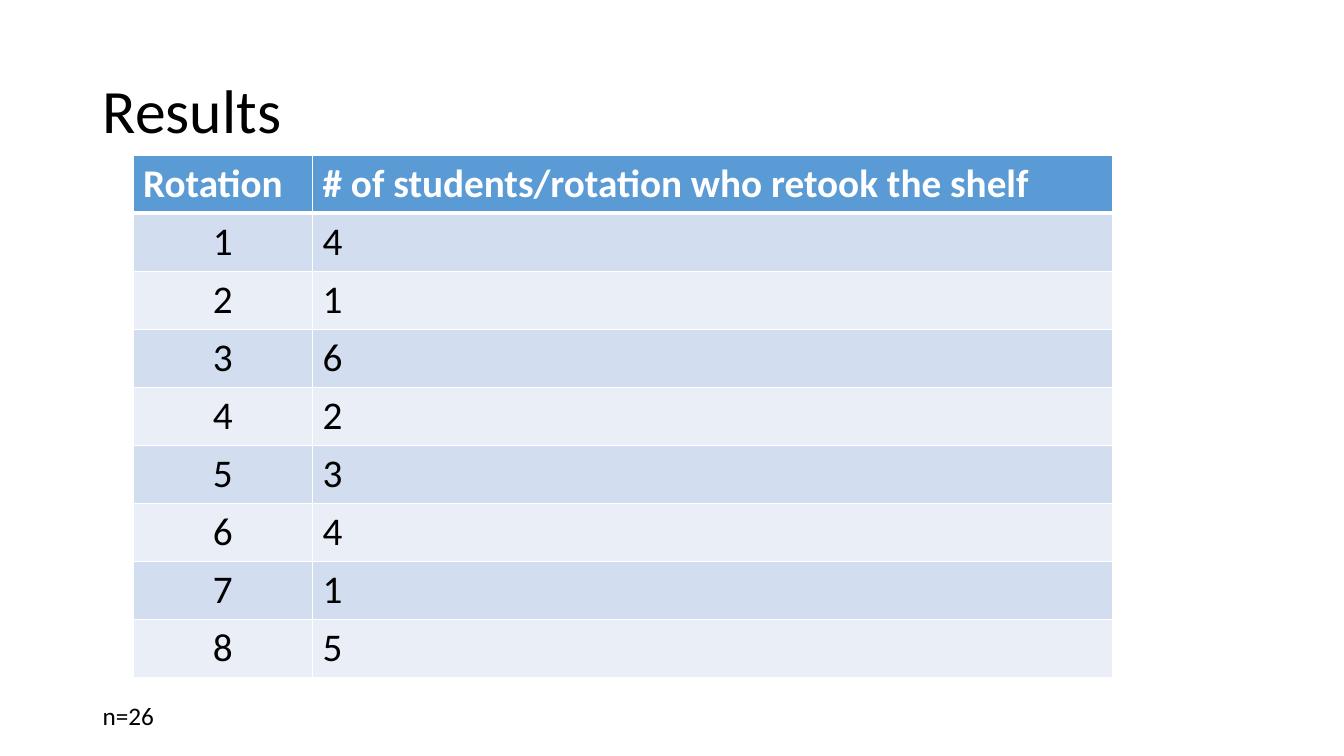
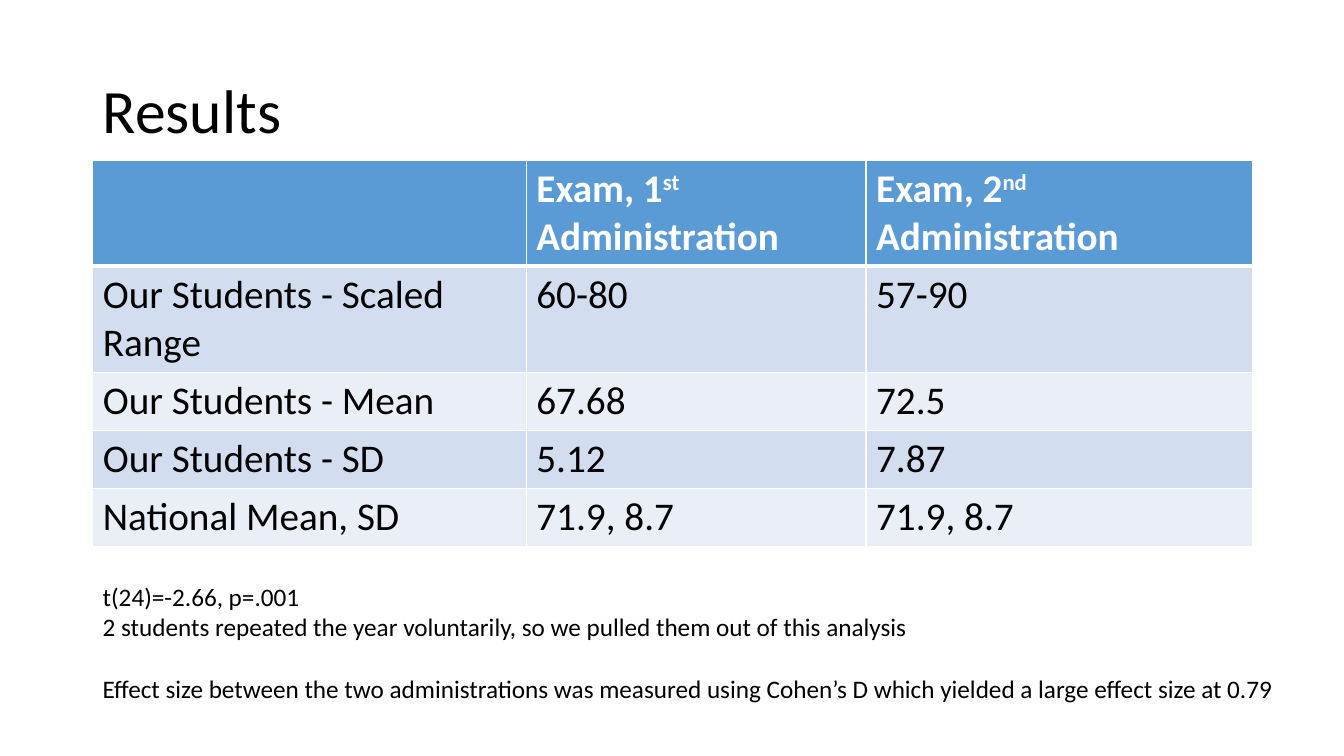
"""Build two results slides, each with a title, a banded table and a note."""
from dataclasses import dataclass

from lxml import etree
from pptx import Presentation
from pptx.dml.color import RGBColor
from pptx.enum.text import MSO_ANCHOR, MSO_AUTO_SIZE, PP_ALIGN
from pptx.oxml.ns import qn
from pptx.util import Inches, Pt

LEFT, CENTER = PP_ALIGN.LEFT, PP_ALIGN.CENTER
MIDDLE = MSO_ANCHOR.MIDDLE
NO_FIT, GROW = MSO_AUTO_SIZE.NONE, MSO_AUTO_SIZE.SHAPE_TO_FIT_TEXT


@dataclass(frozen=True)
class Theme:
    font: str = "Calibri"
    text: str = "000000"
    white: str = "FFFFFF"
    header: str = "5B9BD5"
    bands: tuple = ("D2DEEF", "EAEFF7")
    title_size: int = 44
    table_size: int = 28
    note_size: int = 18
    rule: int = 1
    header_rule: int = 3


T = Theme()
TITLE_BOX = (0.92, 0.4, 11.5, 1.45)
ROW, TALL_ROW = 0.57, 1.05
NOTE_GAP = 22

SLIDES = [
    {
        "title": "Results",
        "at": (1.32, 1.54),
        "cols": [1.78, 7.94],
        "heights": [ROW] * 9,
        "aligns": [CENTER, LEFT],
        "rows": [["Rotation", "# of students/rotation who retook the shelf"]]
        + [[str(i), str(n)] for i, n in enumerate([4, 1, 6, 2, 3, 4, 1, 5], 1)],
        "note_box": (0.92, 6.9, 10.86, 0.4),
        "notes": [("n=26", 0)],
    },
    {
        "title": "Results",
        "at": (0.92, 1.59),
        "cols": [4.3, 3.37, 3.83],
        "heights": [TALL_ROW] * 2 + [ROW] * 3,
        "aligns": [LEFT] * 3,
        "rows": [
            ["", "Exam, 1^st^ Administration", "Exam, 2^nd^ Administration"],
            ["Our Students - Scaled Range", "60-80", "57-90"],
            ["Our Students - Mean", "67.68", "72.5"],
            ["Our Students - SD", "5.12", "7.87"],
            ["National Mean, SD", "71.9, 8.7", "71.9, 8.7"],
        ],
        "note_box": (0.92, 5.72, 12.29, 1.31),
        "notes": [
            ("t(24)=-2.66, p=.001", 0),
            ("2 students repeated the year voluntarily, so we pulled them out of this analysis", 0),
            ("Effect size between the two administrations was measured using Cohen’s D "
             "which yielded a large effect size at 0.79", NOTE_GAP),
        ],
    },
]


def write(p, text, size, color=T.text, bold=False):
    """Add text to a paragraph, raising the parts between carets."""
    for i, part in enumerate(text.split("^")):
        if not part:
            continue
        r = p.add_run()
        r.text = part
        for name, value in {"name": T.font, "size": Pt(size), "bold": bold}.items():
            setattr(r.font, name, value)
        r.font.color.rgb = RGBColor.from_string(color)
        if i % 2:
            r._r.get_or_add_rPr().set("baseline", "30000")


def add_borders(cell, widths):
    """Draw white cell borders from a dict of side to width in points."""
    tcPr = cell._tc.get_or_add_tcPr()
    for side, width in widths.items():
        ln = etree.SubElement(tcPr, qn(f"a:ln{side}"), w=str(Pt(width)))
        fill = etree.SubElement(ln, qn("a:solidFill"))
        etree.SubElement(fill, qn("a:srgbClr"), val=T.white)


prs = Presentation()
prs.slide_width, prs.slide_height = Inches(13.33), Inches(7.5)
layout = prs.slide_layouts.get_by_name("Title Only")

for data in SLIDES:
    s = prs.slides.add_slide(layout)

    title = s.shapes.title
    for name, value in zip(("left", "top", "width", "height"), TITLE_BOX):
        setattr(title, name, Inches(value))
    tf = title.text_frame
    for name, value in {"auto_size": NO_FIT, "word_wrap": True, "vertical_anchor": MIDDLE}.items():
        setattr(tf, name, value)
    p = tf.paragraphs[0]
    p.alignment, p.line_spacing = LEFT, 0.9
    write(p, data["title"], T.title_size)

    rows, cols, heights = data["rows"], data["cols"], data["heights"]
    box = (*data["at"], sum(cols), sum(heights))
    table = s.shapes.add_table(len(rows), len(cols), *map(Inches, box)).table
    for col, width in zip(table.columns, cols):
        col.width = Inches(width)
    for i, (row, height) in enumerate(zip(table.rows, heights)):
        row.height = Inches(height)
        head = i == 0
        fill = T.header if head else T.bands[(i - 1) % 2]
        widths = {
            "L": T.rule,
            "R": T.rule,
            "T": T.header_rule if i == 1 else T.rule,
            "B": T.header_rule if head else T.rule,
        }
        for cell, text, align in zip(row.cells, rows[i], data["aligns"]):
            add_borders(cell, widths)
            cell.fill.solid()
            cell.fill.fore_color.rgb = RGBColor.from_string(fill)
            p = cell.text_frame.paragraphs[0]
            p.alignment = LEFT if head else align
            write(p, text, T.table_size, T.white if head else T.text, head)

    tf = s.shapes.add_textbox(*map(Inches, data["note_box"])).text_frame
    tf.word_wrap, tf.auto_size = True, GROW
    for i, (text, gap) in enumerate(data["notes"]):
        p = tf.add_paragraph() if i else tf.paragraphs[0]
        p.space_before = Pt(gap)
        write(p, text, T.note_size)

prs.save("out.pptx")
